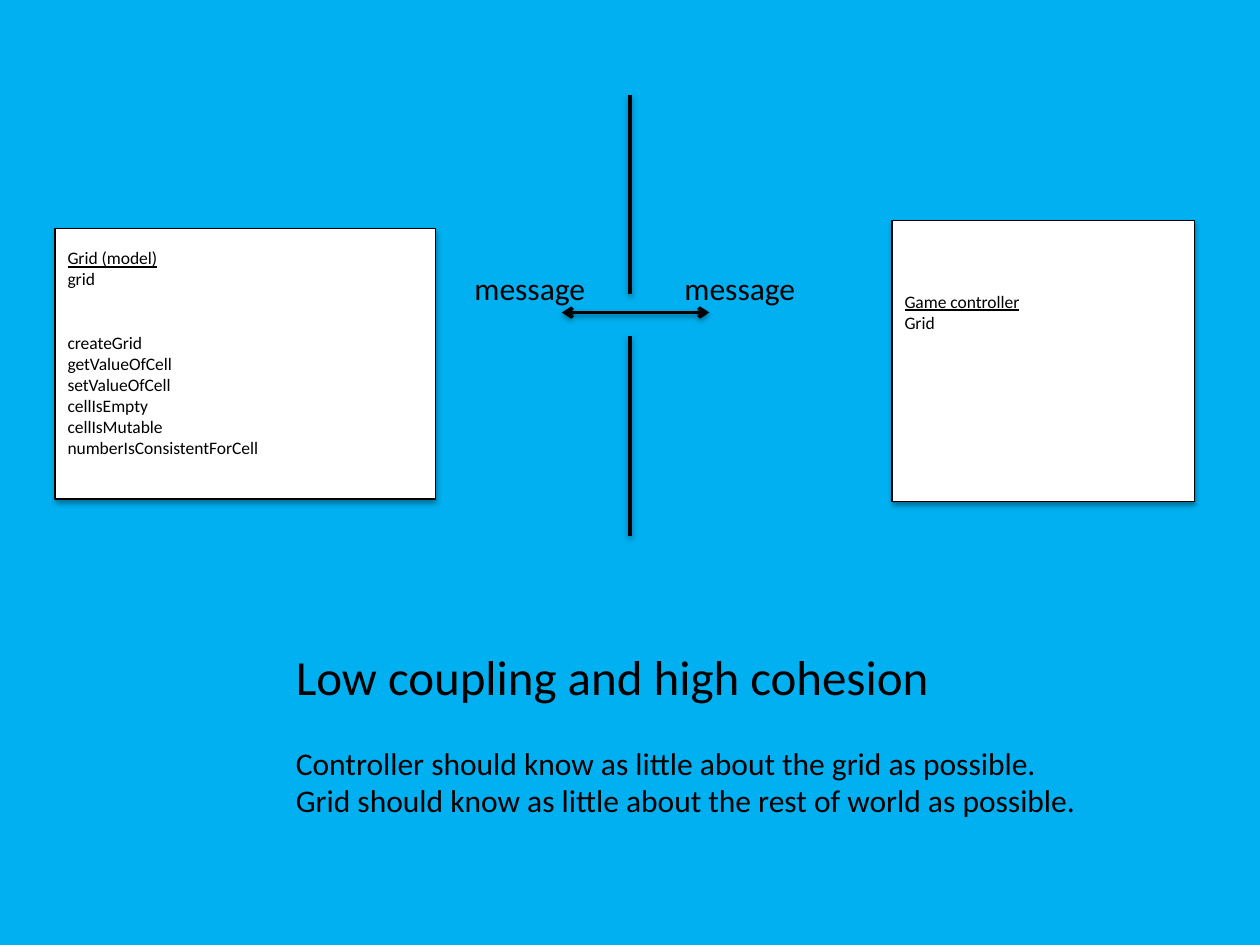
from dataclasses import dataclass

from lxml import etree
from pptx import Presentation
from pptx.dml.color import RGBColor
from pptx.enum import shapes, text
from pptx.oxml import ns
from pptx.util import Pt

SKY = RGBColor(0x00, 0xB0, 0xF0)
WHITE = RGBColor(0xFF, 0xFF, 0xFF)
BLACK = RGBColor(0x00, 0x00, 0x00)
FONT = "Calibri"
INSET = 3.6


@dataclass
class Line:
    text: str
    size: float = 10
    underline: bool = False
    before: float = 0


@dataclass
class Box:
    left: float
    top: float
    width: float
    height: float
    lines: list[Line]
    anchor: text.MSO_ANCHOR = text.MSO_ANCHOR.TOP
    inset_top: float = INSET
    inset_bottom: float = INSET


@dataclass
class Rule:
    x1: float
    y1: float
    x2: float
    y2: float
    arrows: bool = False


def add_shadow(s, distance: float, opacity: int) -> None:
    """Cast a soft black shadow straight down."""
    sp_pr = s._element.spPr
    effects = sp_pr.find(ns.qn("a:effectLst"))
    if effects is None:
        effects = etree.SubElement(sp_pr, ns.qn("a:effectLst"))
    shadow = etree.SubElement(effects, ns.qn("a:outerShdw"), blurRad=str(Pt(3.1)),
                              dist=str(Pt(distance)), dir="5400000", rotWithShape="0")
    color = etree.SubElement(shadow, ns.qn("a:srgbClr"), val=str(BLACK))
    etree.SubElement(color, ns.qn("a:alpha"), val=str(opacity * 1000))


def write(tf, lines: list[Line]) -> None:
    for i, line in enumerate(lines):
        p = tf.paragraphs[0] if i == 0 else tf.add_paragraph()
        p.text = line.text
        p.alignment = text.PP_ALIGN.LEFT
        p.space_before = Pt(line.before)
        p.font.name = FONT
        p.font.size = Pt(line.size)
        p.font.underline = line.underline
        p.font.color.rgb = BLACK


def draw_class(slide, box: Box) -> None:
    s = slide.shapes.add_shape(shapes.MSO_SHAPE.RECTANGLE, Pt(box.left), Pt(box.top),
                               Pt(box.width), Pt(box.height))
    s.shadow.inherit = False
    s.fill.solid()
    s.fill.fore_color.rgb = WHITE
    s.line.color.rgb = BLACK
    s.line.width = Pt(0.75)
    add_shadow(s, 1.8, 35)
    tf = s.text_frame
    tf.word_wrap = True
    tf.vertical_anchor = box.anchor
    tf.margin_top, tf.margin_bottom = Pt(box.inset_top), Pt(box.inset_bottom)
    write(tf, box.lines)


def draw_text(slide, box: Box) -> None:
    s = slide.shapes.add_textbox(Pt(box.left), Pt(box.top), Pt(box.width), Pt(box.height))
    tf = s.text_frame
    tf.word_wrap = False
    tf.auto_size = text.MSO_AUTO_SIZE.SHAPE_TO_FIT_TEXT
    write(tf, box.lines)


def draw_rule(slide, rule: Rule) -> None:
    s = slide.shapes.add_connector(shapes.MSO_CONNECTOR.STRAIGHT, Pt(rule.x1), Pt(rule.y1),
                                   Pt(rule.x2), Pt(rule.y2))
    s.line.color.rgb = BLACK
    s.line.width = Pt(2)
    if rule.arrows:
        ln = s.line._get_or_add_ln()
        for end in ("a:headEnd", "a:tailEnd"):
            etree.SubElement(ln, ns.qn(end), type="arrow")
    add_shadow(s, 1.6, 38)


ROW = 12.2  # height of a 10 pt line

CONTROLLER = Box(509.8, 126, 172.8, 160.6,
                 [Line("Game controller", underline=True), Line("Grid")],
                 inset_top=INSET + 3 * ROW)

METHODS = ["getValueOfCell", "setValueOfCell", "cellIsEmpty", "cellIsMutable",
           "numberIsConsistentForCell"]
GRID = Box(31.5, 130.4, 217.4, 154.8,
           [Line("Grid (model)", underline=True), Line("grid"),
            Line("createGrid", before=2 * ROW), *map(Line, METHODS)],
           anchor=text.MSO_ANCHOR.MIDDLE, inset_bottom=INSET + ROW)

CAPTION = Box(162, 365.8, 465.1, 106.6, [
    Line("Low coupling and high cohesion", 28),
    Line("Controller should know as little about the grid as possible.", 18, before=22),
    Line("Grid should know as little about the rest of world as possible.", 18),
])
MESSAGES = [Box(left, 150, 78.5, 29, [Line("message", 18)]) for left in (384, 264)]

RULES = [
    Rule(360, 54, 360, 168),
    Rule(360, 192, 360, 306),
    Rule(321, 178.6, 405.4, 178.6, arrows=True),
]


def main() -> None:
    prs = Presentation()
    prs.slide_width, prs.slide_height = Pt(720), Pt(540)
    slide = prs.slides.add_slide(prs.slide_layouts[6])
    slide.background.fill.solid()
    slide.background.fill.fore_color.rgb = SKY

    # Controller and the design principle
    draw_class(slide, CONTROLLER)
    draw_text(slide, CAPTION)

    # Divider with the message exchange through its gap
    for rule in RULES:
        draw_rule(slide, rule)
    for message in MESSAGES:
        draw_text(slide, message)

    # Model
    draw_class(slide, GRID)

    prs.save("out.pptx")


if __name__ == "__main__":
    main()
